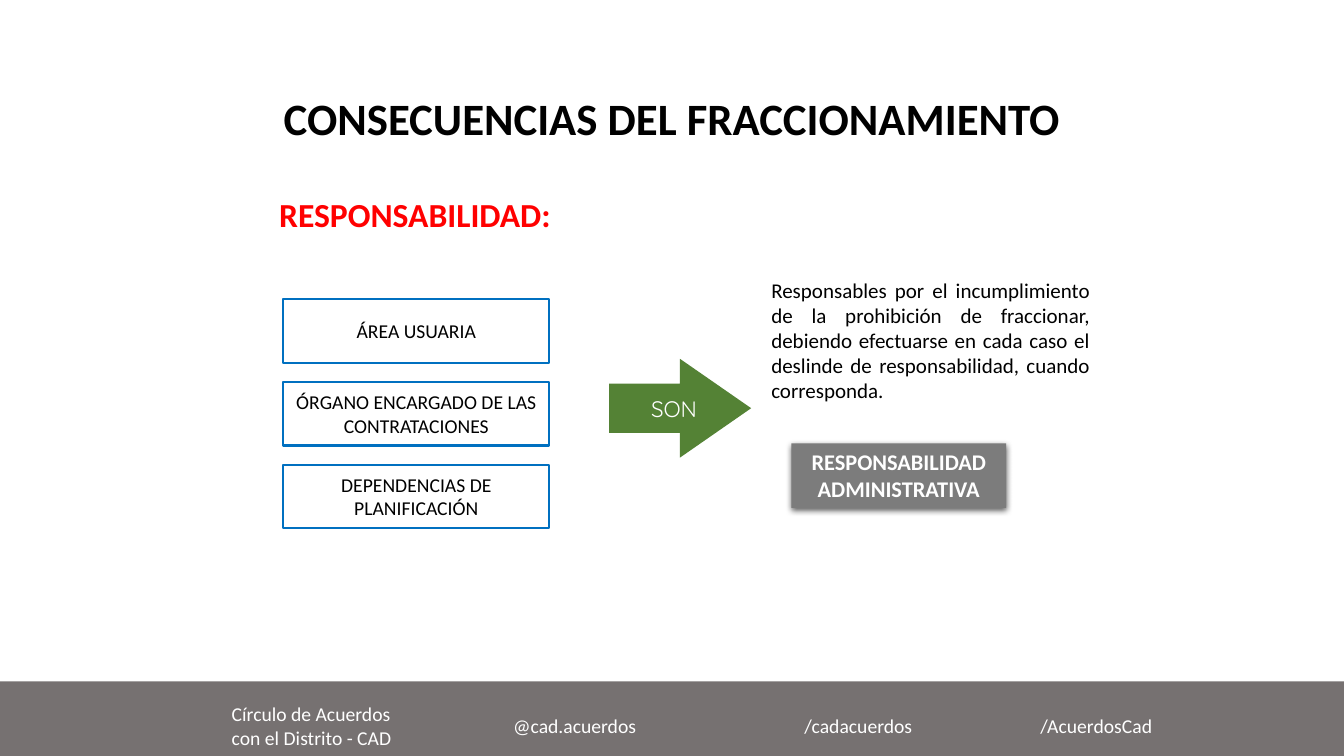
from dataclasses import dataclass
from lxml.etree import SubElement
from pptx import Presentation
from pptx.dml.color import RGBColor as Rgb
from pptx.enum.shapes import MSO_SHAPE as Kind
from pptx.enum.text import MSO_ANCHOR as Anchor, PP_ALIGN as Align
from pptx.oxml.ns import qn
from pptx.util import Inches, Pt


@dataclass(frozen=True)
class Theme:
    font: str = "Calibri"
    round: str = "Quicksand"
    white: str = "FFFFFF"
    black: str = "000000"
    red: str = "FF0000"
    blue: str = "0070C0"
    green: str = "548235"
    gray: str = "7C7C7C"
    band: str = "767171"
    title: int = 32
    head: int = 24
    label: int = 16
    body: int = 15
    small: int = 14


LOOK = Theme()


def apply(item, form):
    for name, value in form.items():
        setattr(item, name, value)


def write(shape, text, size, color, font=LOOK.font, bold=False,
          align=Align.CENTER, anchor=Anchor.MIDDLE, pad=None, space=1.0):
    frame = shape.text_frame
    form = {"word_wrap": True, "vertical_anchor": anchor}
    if pad is not None:
        sides = ("left", "top", "right", "bottom")
        form.update({f"margin_{side}": Inches(pad) for side in sides})
    apply(frame, form)
    para = frame.paragraphs[0]
    apply(para, {"alignment": align, "line_spacing": space})
    run = para.add_run()
    run.text = text
    apply(run.font, {"name": font, "size": Pt(size), "bold": bold})
    run.font.color.rgb = Rgb.from_string(color)


def label(slide, area, text, size, color, **form):
    box = slide.shapes.add_textbox(*map(Inches, area))
    write(box, text, size, color, **form)


def block(slide, area, fill=None, line=None, kind=Kind.RECTANGLE):
    shape = slide.shapes.add_shape(kind, *map(Inches, area))
    shape.shadow.inherit = False
    if fill:
        shape.fill.solid()
        shape.fill.fore_color.rgb = Rgb.from_string(fill)
    else:
        shape.fill.background()
    if line:
        shape.line.color.rgb = Rgb.from_string(line)
        shape.line.width = Pt(1.5)
    else:
        shape.line.fill.background()
    return shape


def shade(shape):
    effect = shape.element.spPr.find(qn("a:effectLst"))
    outer = SubElement(effect, qn("a:outerShdw"), blurRad=str(Pt(4.5)),
                       dist=str(Pt(1.5)), dir="5400000", rotWithShape="0")
    color = SubElement(outer, qn("a:srgbClr"), val=LOOK.black)
    SubElement(color, qn("a:alpha"), val="63000")


def footer(slide):
    block(slide, (0, 6.76, 13.33, 0.74), LOOK.band)
    notes = (
        (2.2, 1.95, "Círculo de Acuerdos con el Distrito - CAD"),
        (4.99, 1.58, "@cad.acuerdos"),
        (7.88, 1.58, "/cadacuerdos"),
        (10.22, 1.56, "/AcuerdosCad"),
    )
    for left, width, text in notes:
        label(slide, (left, 6.9, width, 0.6), text, LOOK.small, LOOK.white,
              align=Align.LEFT)


def parties(slide):
    names = ("ÁREA USUARIA", "ÓRGANO ENCARGADO DE LAS CONTRATACIONES",
             "DEPENDENCIAS DE PLANIFICACIÓN")
    for row, name in enumerate(names):
        box = block(slide, (2.81, 2.97 + 0.82 * row, 2.64, 0.63),
                    line=LOOK.blue)
        write(box, name, LOOK.small, LOOK.black)


def arrow(slide):
    shape = block(slide, (6.04, 3.56, 1.41, 0.98), LOOK.green,
                  kind=Kind.RIGHT_ARROW)
    shape.adjustments[0] = 0.5
    shape.adjustments[1] = 0.72
    label(slide, (6.09, 3.87, 1.19, 0.36), "SON", LOOK.label, LOOK.white,
          font=LOOK.round, pad=0.05)


def result(slide):
    box = block(slide, (7.61, 2.71, 3.24, 1.35), LOOK.white)
    write(box, "Responsables por el incumplimiento de la prohibición de "
          "fraccionar, debiendo efectuarse en cada caso el deslinde de "
          "responsabilidad, cuando corresponda.", LOOK.body, LOOK.black,
          align=Align.JUSTIFY, anchor=Anchor.TOP, pad=0.04)
    tag = block(slide, (7.85, 4.4, 2.13, 0.64), LOOK.gray)
    shade(tag)
    write(tag, "RESPONSABILIDAD ADMINISTRATIVA", LOOK.label, LOOK.white,
          bold=True, anchor=Anchor.TOP)


def main():
    deck = Presentation()
    apply(deck, {"slide_width": Inches(13.33), "slide_height": Inches(7.5)})
    slide = deck.slides.add_slide(deck.slide_layouts[6])
    footer(slide)
    label(slide, (2.34, 0.92, 8.65, 0.56), "CONSECUENCIAS DEL FRACCIONAMIENTO",
          LOOK.title, LOOK.black, bold=True, space=0.9)
    parties(slide)
    arrow(slide)
    result(slide)
    label(slide, (2.67, 1.87, 2.92, 0.5), "RESPONSABILIDAD:", LOOK.head,
          LOOK.red, bold=True, align=Align.LEFT, anchor=Anchor.TOP)
    deck.save("out.pptx")


if __name__ == "__main__":
    main()
